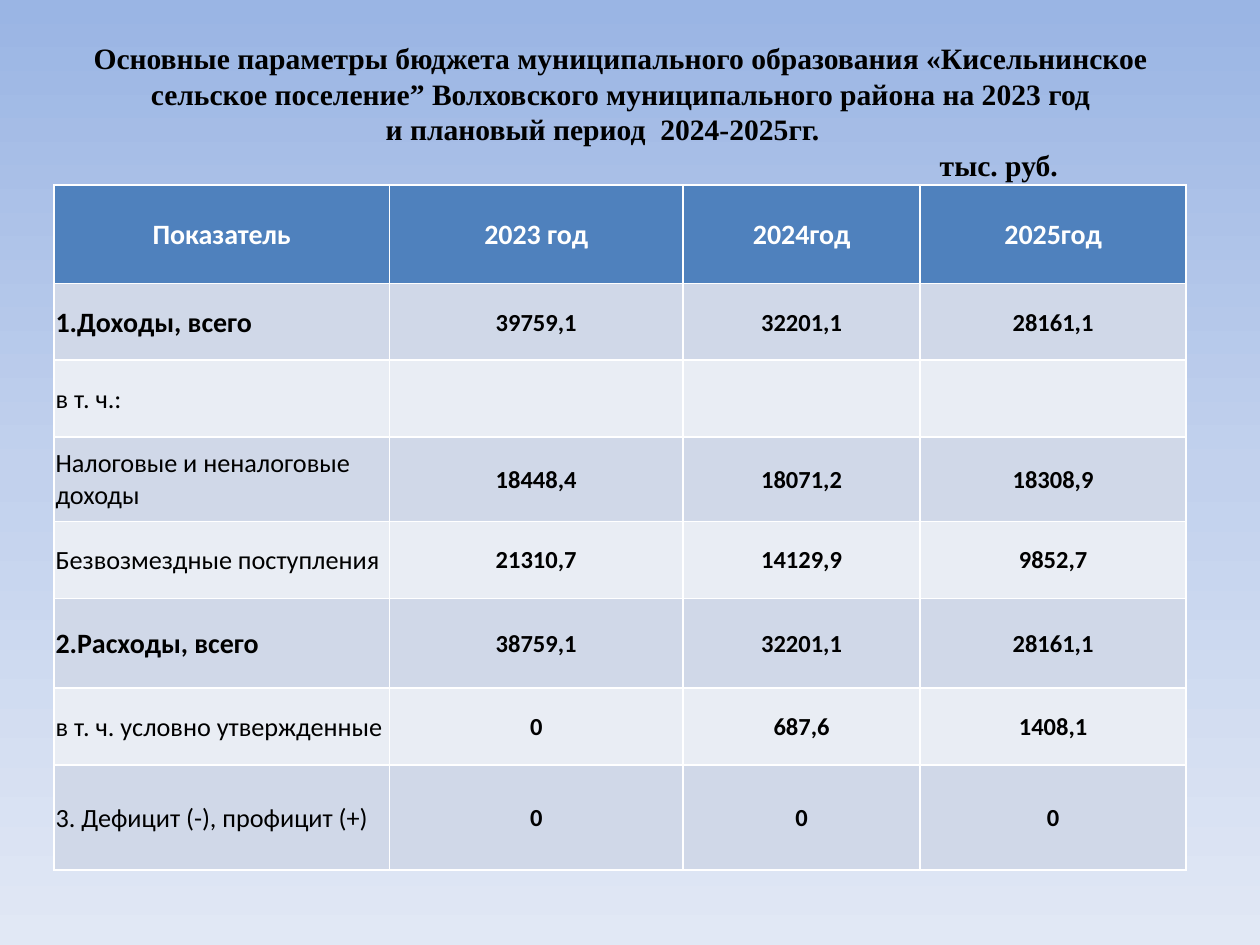
from copy import deepcopy

from pptx import Presentation
from pptx.dml.color import RGBColor
from pptx.enum.text import MSO_ANCHOR as Anchor, MSO_AUTO_SIZE as AutoSize, PP_ALIGN as Align
from pptx.oxml.ns import qn
from pptx.util import Cm, Pt

# Text and indent in cm; no indent means centred
TITLE = [
    ("Основные параметры бюджета муниципального образования «Кисельнинское "
     "сельское поселение” Волховского муниципального района на 2023 год", None),
    ("и плановый период  2024-2025гг.", 6.43),
    ("тыс. руб.", 17.6),
]
BUDGET = [
    ("Показатель", "2023 год", "2024год", "2025год"),
    ("1.Доходы, всего", "39759,1", "32201,1", "28161,1"),
    ("в т. ч.:", "", "", ""),
    ("Налоговые и неналоговые доходы", "18448,4", "18071,2", "18308,9"),
    ("Безвозмездные поступления", "21310,7", "14129,9", "9852,7"),
    ("2.Расходы, всего", "38759,1", "32201,1", "28161,1"),
    ("в т. ч. условно утвержденные", "0", "687,6", "1408,1"),
    ("3. Дефицит (-), профицит (+)", "0", "0", "0"),
]
TOTAL_ROWS = (1, 5)
COLUMN_WIDTHS = [6.76, 5.92, 4.78, 5.36]
ROW_HEIGHTS = [1.99, 1.54, 1.55, 1.7, 1.55, 1.81, 1.55, 2.12]


def color(value):
    return RGBColor.from_string(value)


def style_font(font, name, size, value, bold):
    font.name, font.size, font.bold = name, Pt(size), bold
    font.color.rgb = color(value)


def paint_background(page):
    fill = page.background.fill
    fill.gradient()
    fill.gradient_angle = 270
    stop_list = page.element.find(".//" + qn("a:gsLst"))
    stop_list.append(deepcopy(stop_list[-1]))
    for stop, position, value in zip(fill.gradient_stops, (0, 0.5, 1),
                                     ("9AB5E4", "C2D1ED", "E1E8F5")):
        stop.position = position
        stop.color.rgb = color(value)


def place_title(page, left, top, width, height):
    title = page.shapes.title
    title.left, title.top, title.width, title.height = map(Cm, (left, top, width, height))
    frame = title.text_frame
    frame.text = "\n".join(text for text, _ in TITLE)
    frame.word_wrap = True
    frame.auto_size = AutoSize.NONE
    frame.vertical_anchor = Anchor.MIDDLE
    for para, (_, indent) in zip(frame.paragraphs, TITLE):
        para.alignment = Align.CENTER if indent is None else Align.LEFT
        if indent is not None:
            properties = para._p.get_or_add_pPr()
            properties.set("marL", str(Cm(indent)))
            properties.set("indent", "0")
        style_font(para.runs[0].font, "Times New Roman", 16.9, "000000", True)


def fill_cell(cell, text, row, column):
    header, label = row == 0, column == 0
    cell.fill.solid()
    cell.fill.fore_color.rgb = color("4F81BD" if header else "D0D8E8" if row % 2 else "E9EDF4")
    cell.vertical_anchor = Anchor.MIDDLE
    cell.margin_left = cell.margin_top = cell.margin_right = Cm(0.03)
    cell.margin_bottom = 0
    if not text:
        return
    strong = header or row in TOTAL_ROWS
    size = 16 if header else 14 if not label else 16 if strong else 15
    cell.text = text
    para = cell.text_frame.paragraphs[0]
    para.alignment = Align.LEFT if label and not header else Align.CENTER
    style_font(para.runs[0].font, "Calibri", size,
               "FFFFFF" if header else "000000", strong or not label)


def place_budget_table(page, left, top):
    table = page.shapes.add_table(
        len(ROW_HEIGHTS), len(COLUMN_WIDTHS), Cm(left), Cm(top),
        Cm(sum(COLUMN_WIDTHS)), Cm(sum(ROW_HEIGHTS))).table
    for column, width in zip(table.columns, COLUMN_WIDTHS):
        column.width = Cm(width)
    for row, height in zip(table.rows, ROW_HEIGHTS):
        row.height = Cm(height)
    for row, texts in enumerate(BUDGET):
        for column, text in enumerate(texts):
            fill_cell(table.cell(row, column), text, row, column)


def main():
    deck = Presentation()
    deck.slide_width, deck.slide_height = Cm(25.4), Cm(19.05)
    page = deck.slides.add_slide(deck.slide_layouts[5])
    paint_background(page)
    place_title(page, 1.09, 0.74, 22.86, 3)
    place_budget_table(page, 1.09, 3.73)
    deck.save("out.pptx")


if __name__ == "__main__":
    main()
